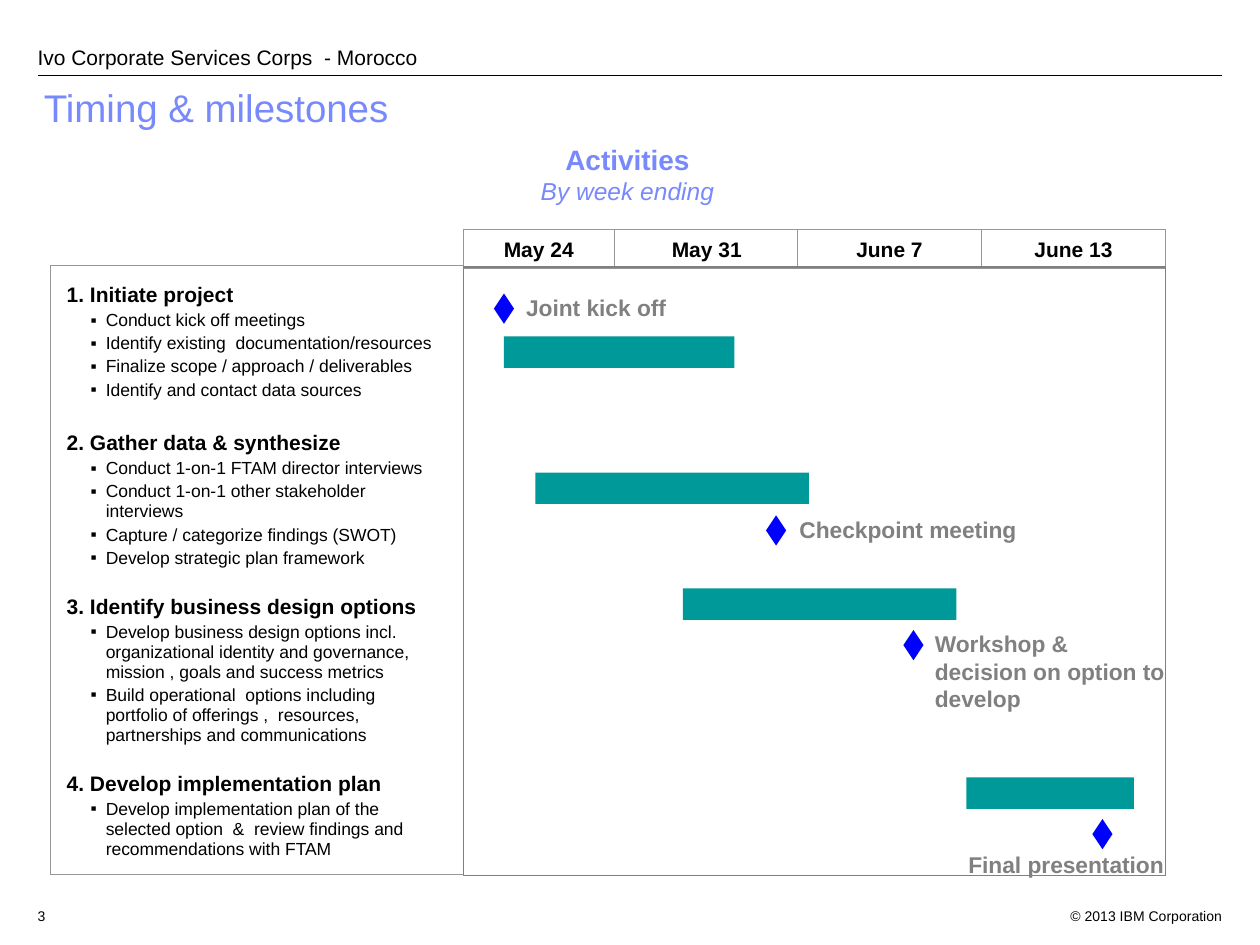
"""Build a project timing slide with a work plan and a weekly schedule."""
from lxml import etree
from pptx import Presentation
from pptx import util as u
from pptx.dml.color import RGBColor
from pptx.enum import shapes, text
from pptx.oxml.ns import qn

LEFT, CENTER, RIGHT = text.PP_ALIGN.LEFT, text.PP_ALIGN.CENTER, text.PP_ALIGN.RIGHT
TOP, MIDDLE, BOTTOM = text.MSO_ANCHOR.TOP, text.MSO_ANCHOR.MIDDLE, text.MSO_ANCHOR.BOTTOM
Inches = u.Inches


def paint(color_format, hex_color):
    color_format.rgb = RGBColor.from_string(hex_color)


def add_box(kind, place, fill=None, outline=None):
    box = slide.shapes.add_shape(kind, *map(Inches, place))
    box.shadow.inherit = False
    if fill:
        box.fill.solid()
        paint(box.fill.fore_color, fill)
    else:
        box.fill.background()
    if outline:
        paint(box.line.color, outline)
        box.line.width = u.Pt(0.75)
    else:
        box.line.fill.background()
    return box


def write(holder, lines, color="000000", align=LEFT, anchor=TOP, inset=(0.1, 0.05), wrap=True):
    frame = holder.text_frame
    frame.word_wrap = wrap
    frame.vertical_anchor = anchor
    frame.margin_left = frame.margin_right = Inches(inset[0])
    frame.margin_top = frame.margin_bottom = Inches(inset[1])
    frame.text = "\n".join(line[0] for line in lines)
    for paragraph, (_, size, bold, italic) in zip(frame.paragraphs, lines):
        paragraph.alignment = align
        for run in paragraph.runs:
            run.font.name = "Arial"
            run.font.size = u.Pt(size)
            run.font.bold = bold
            run.font.italic = italic
            paint(run.font.color, color)
    return frame


deck = Presentation()
deck.slide_width, deck.slide_height = Inches(10), Inches(7.5)
slide = deck.slides.add_slide(deck.slide_layouts[6])

header_rule = slide.shapes.add_connector(
    shapes.MSO_CONNECTOR.STRAIGHT, Inches(0.3), Inches(0.6), Inches(9.7), Inches(0.6))
paint(header_rule.line.color, "000000")
header_rule.line.width = u.Pt(0.75)
etree.SubElement(header_rule._element.spPr, qn("a:effectLst"))

page_texts = [
    ((8.3, 7.15, 1.5, 0.2), [("© 2013 IBM Corporation", 8, False, False)],
     dict(align=RIGHT, wrap=False)),
    ((0.2, 0.15, 8.63, 0.4), [("Ivo Corporate Services Corps  - Morocco", 12, False, False)],
     dict(anchor=BOTTOM, inset=(0.1, 0))),
    ((0.2, 7.15, 0.4, 0.2), [("3", 8, False, False)], {}),
    ((0.25, 0.66, 8.68, 0.8), [("Timing & milestones", 22, False, False)],
     dict(color="7889FB")),
    ((0.25, 1.08, 9.46, 0.61),
     [("Activities", 16, True, False), ("By week ending", 14, False, True)],
     dict(color="7889FB", align=CENTER)),
]
for place, lines, options in page_texts:
    write(slide.shapes.add_textbox(*map(Inches, place)), lines, **options)
    if lines[0][0] == "Timing & milestones":
        slide.shapes[-1].text_frame.paragraphs[0].line_spacing = 0.9

phases = [
    ("1. Initiate project", 0, [
        "Conduct kick off meetings",
        "Identify existing  documentation/resources",
        "Finalize scope / approach / deliverables",
        "Identify and contact data sources"]),
    ("2. Gather data & synthesize", 18, [
        "Conduct 1-on-1 FTAM director interviews",
        "Conduct 1-on-1 other stakeholder interviews",
        "Capture / categorize findings (SWOT)",
        "Develop strategic plan framework"]),
    ("3. Identify business design options", 15.4, [
        "Develop business design options incl. organizational identity and governance, "
        "mission , goals and success metrics",
        "Build operational  options including portfolio of offerings ,  resources, "
        "partnerships and communications"]),
    ("4. Develop implementation plan", 15.4, [
        "Develop implementation plan of the selected option  &  review findings and "
        "recommendations with FTAM"]),
]
plan_lines, space_before = [], []
for heading, gap, tasks in phases:
    plan_lines += [(heading, 12, True, False)] + [(task, 10, False, False) for task in tasks]
    space_before += [gap] + [1.8] * len(tasks)

add_box(shapes.MSO_SHAPE.RECTANGLE, (0.4, 2.11, 3.28, 4.83), outline="969696")
plan = write(slide.shapes.add_textbox(*map(Inches, (0.53, 2.25, 2.93, 4.83))),
             plan_lines, inset=(0, 0))
for paragraph, (_, _, is_heading, _), gap in zip(plan.paragraphs, plan_lines, space_before):
    paragraph.line_spacing = 0.95
    paragraph.space_before = u.Pt(gap)
    margin, hanging = (0.18, -0.18) if is_heading else (0.31, -0.12)
    properties = paragraph._p.get_or_add_pPr()
    properties.set("marL", str(Inches(margin)))
    properties.set("indent", str(Inches(hanging)))
    if not is_heading:
        bullet_color = etree.SubElement(properties, qn("a:buClr"))
        etree.SubElement(bullet_color, qn("a:srgbClr"), val="000000")
        etree.SubElement(properties, qn("a:buFont"), typeface="Arial")
        etree.SubElement(properties, qn("a:buChar"), char="▪")

weeks = [("May 24 ", 3.68, 1.24), ("May 31", 4.88, 1.46),
         ("June 7", 6.33, 1.46), ("June 13", 7.79, 1.46)]
for week, left, width in weeks:
    week_cell = add_box(shapes.MSO_SHAPE.RECTANGLE, (left, 1.82, width, 0.31), "FFFFFF", "969696")
    write(week_cell, [(week, 12, True, False)], align=CENTER, anchor=MIDDLE)

add_box(shapes.MSO_SHAPE.RECTANGLE, (3.68, 2.12, 5.57, 4.83), outline="808080")

for left, top, width in [(4, 2.67, 1.83), (4.25, 3.75, 2.17), (5.42, 4.67, 2.17), (7.67, 6.17, 1.33)]:
    add_box(shapes.MSO_SHAPE.RECTANGLE, (left, top, width, 0.25), "009999")

milestones = [
    ("Joint kick off", 3.92, 2.33, (4.17, 2.33, 1.12, 0.22), CENTER, False),
    ("Checkpoint meeting", 6.08, 4.09, (6.33, 4.09, 1.75, 0.22), CENTER, False),
    ("Workshop & decision on option to develop", 7.17, 5, (7.42, 5, 1.83, 0.66), LEFT, True),
    ("Final presentation", 8.67, 6.5, (7.67, 6.75, 1.58, 0.22), CENTER, False),
]
for milestone, left, top, label_place, align, wrap in milestones:
    add_box(shapes.MSO_SHAPE.DIAMOND, (left, top, 0.16, 0.24), "0000FF")
    write(slide.shapes.add_textbox(*map(Inches, label_place)), [(milestone, 13, True, False)],
          "808080", align, inset=(0, 0), wrap=wrap)

deck.save("out.pptx")
